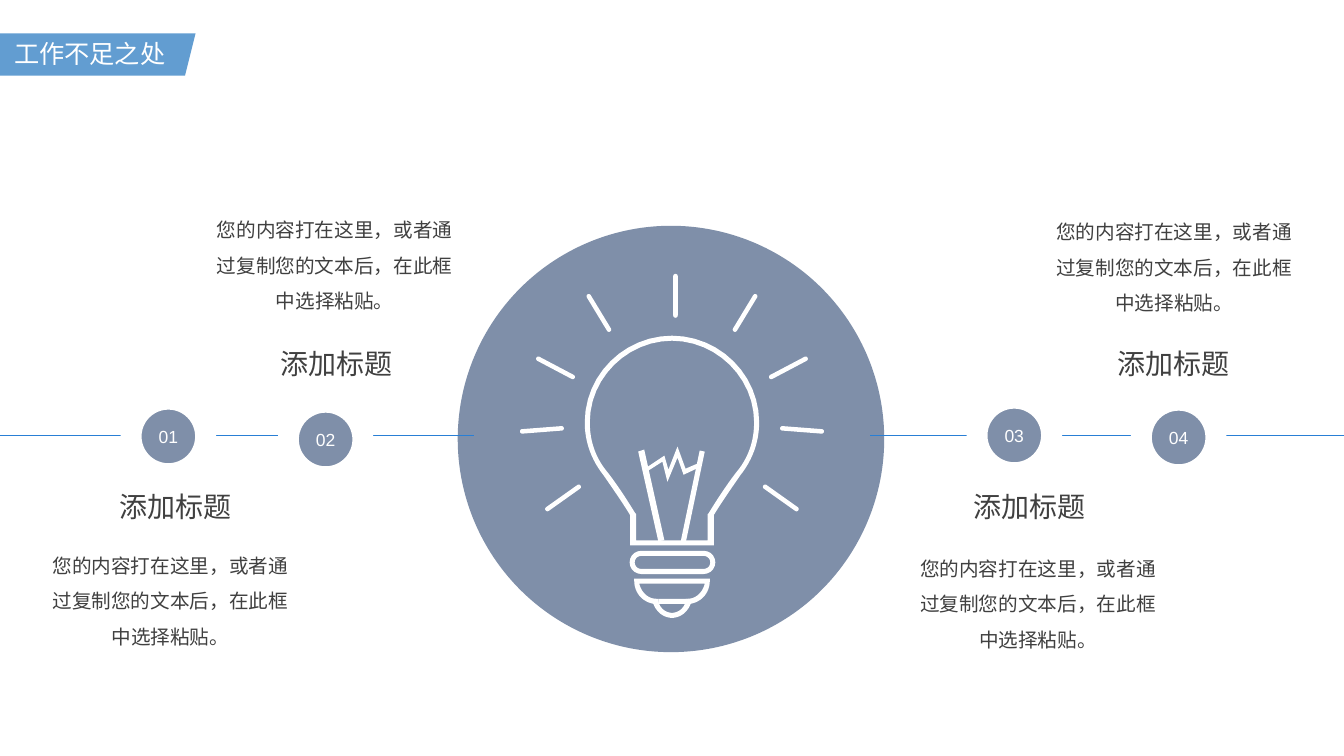
import math
from dataclasses import dataclass

import pptx
import pptx.dml.color
import pptx.enum.shapes
import pptx.enum.text
import pptx.oxml
import pptx.oxml.ns
import pptx.util

PX = 9144  # EMU per px, 100 px to the inch
FONT = "Arial"
COLORS = {"slate": "7F8FA9", "banner": "629DD1", "line": "297FD5",
          "text": "404040", "white": "FFFFFF"}
HEADING = "添加标题"
BODY = "您的内容打在这里，或者通过复制您的文本后，在此框中选择粘贴。"
MIRROR = 1333  # x and MIRROR - x lie on opposite sides of the bulb

SHAPE = pptx.enum.shapes.MSO_SHAPE
ALIGN = pptx.enum.text.PP_ALIGN
ANCHOR = pptx.enum.text.MSO_ANCHOR
AUTOSIZE = pptx.enum.text.MSO_AUTO_SIZE

Point = tuple[float, float]
Box = tuple[int, int, int, int]


@dataclass
class Topic:
    number: str
    dot: Point
    heading: Point
    body: Box


TOPICS = [
    Topic("01", (130, 396), (78, 481), (42, 533, 254, 116)),
    Topic("02", (286, 399), (237, 339), (203, 200, 258, 116)),
    Topic("03", (969, 395), (925, 481), (894, 536, 271, 116)),
    Topic("04", (1132, 397), (1067, 339), (1034, 202, 261, 116)),
]

# Left halves of the bulb outlines: pairs are corners, sixes are Bezier curves
GLASS = [
    [(667, 333), (619, 333, 580, 372, 580, 419), (580, 439, 587, 457, 599, 472),
     (608, 485, 617, 498, 625, 511), (625, 541)],
    [(667, 338), (622, 338, 585, 375, 585, 419), (585, 438, 591, 455, 603, 469),
     (613, 482, 622, 496, 630, 509), (631, 510), (631, 536)],
]
CAP = [
    [(667, 613), (658, 613, 651, 607, 648, 599), (637, 597, 629, 588, 629, 576),
     (629, 574)],
    [(667, 608), (660, 608, 654, 603, 653, 596), (653, 594), (651, 594),
     (642, 594, 636, 587, 634, 579)],
]
FILAMENT = [
    [(653, 537), (633, 448), (639, 446), (659, 536)],
    [(680, 539), (675, 538), (694, 447), (699, 448)],
    [(662, 478), (657, 458), (643, 467), (641, 464), (659, 452), (663, 466),
     (672, 443), (680, 465), (694, 459), (695, 463), (678, 471), (672, 454)],
]
RIGHT_RAYS = [((729, 327), (749, 294)), ((765, 374), (799, 356)),
              ((776, 425), (815, 428)), ((759, 483), (790, 505))]
TOP_RAY = ((670, 274), (670, 313))


def rgb(name: str) -> pptx.dml.color.RGBColor:
    return pptx.dml.color.RGBColor.from_string(COLORS[name])


def paint(sp, color: str) -> None:
    sp.fill.solid()
    sp.fill.fore_color.rgb = rgb(color)
    sp.line.fill.background()
    sp.shadow.inherit = False


def add_preset(shapes, kind, box: Box, color: str):
    sp = shapes.add_shape(kind, *(v * PX for v in box))
    paint(sp, color)
    return sp


def write(tf, text: str, size: float, color: str, align) -> None:
    p = tf.paragraphs[0]
    p.alignment = align
    r = p.add_run()
    r.text = text
    r.font.name = FONT
    r.font.size = pptx.util.Pt(size)
    r.font.color.rgb = rgb(color)


def add_text(s, box: Box, text: str, size: float, align, spacing=None) -> None:
    tf = s.shapes.add_textbox(*(v * PX for v in box)).text_frame
    tf.word_wrap = True
    tf.auto_size = AUTOSIZE.SHAPE_TO_FIT_TEXT
    write(tf, text, size, "text", align)
    if spacing:
        tf.paragraphs[0].line_spacing = spacing


def add_line(s, x1: int, x2: int, y: int) -> None:
    cxn = s.shapes.add_connector(pptx.enum.shapes.MSO_CONNECTOR.STRAIGHT,
                                 x1 * PX, y * PX, x2 * PX, y * PX)
    cxn.line.color.rgb = rgb("line")
    cxn.line.width = pptx.util.Pt(0.5)
    pptx.oxml.ns.qn("a:effectLst")
    cxn._element.spPr.append(pptx.oxml.parse_xml(
        f'<a:effectLst {pptx.oxml.ns.nsdecls("a")}/>'))


def flatten(half: list[tuple], steps: int = 12) -> list[Point]:
    points = [half[0]]
    for seg in half[1:]:
        if len(seg) == 2:
            points.append(seg)
            continue
        a, b, c, d = points[-1], seg[:2], seg[2:4], seg[4:]
        for i in range(1, steps + 1):
            t = i / steps
            u = 1 - t
            points.append(tuple(
                u**3 * a[k] + 3 * u * u * t * b[k] + 3 * u * t * t * c[k] + t**3 * d[k]
                for k in (0, 1)))
    return points


def symmetric(half: list[tuple]) -> list[Point]:
    left = flatten(half)
    return left + [(MIRROR - x, y) for x, y in reversed(left)]


def capsule(start: Point, end: Point, width: float, steps: int = 10) -> list[Point]:
    angle = math.atan2(end[1] - start[1], end[0] - start[0])
    points = []
    for (x, y), first in ((end, angle - math.pi / 2), (start, angle + math.pi / 2)):
        for i in range(steps + 1):
            a = first + math.pi * i / steps
            points.append((x + width / 2 * math.cos(a), y + width / 2 * math.sin(a)))
    return points


def add_outline(shapes, contours: list[list[Point]]) -> None:
    fb = None
    for contour in contours:
        emu = [(x * PX, y * PX) for x, y in contour]
        if fb is None:
            fb = shapes.build_freeform(*emu[0])
        else:
            fb.move_to(*emu[0])
        fb.add_line_segments(emu[1:], close=True)
    paint(fb.convert_to_shape(), "white")


def add_bulb(s) -> None:
    bulb = s.shapes.add_group_shape().shapes
    add_outline(bulb, [capsule((636, 558), (698, 558), w) for w in (23, 13)])
    for halves in (CAP, GLASS):
        add_outline(bulb, [symmetric(half) for half in halves])
    for wire in FILAMENT:
        add_outline(bulb, [wire])
    add_preset(bulb, SHAPE.RECTANGLE, (653, 594, 29, 5), "white")
    left_rays = [tuple((MIRROR - x, y) for x, y in ray) for ray in RIGHT_RAYS]
    for start, end in [TOP_RAY, *RIGHT_RAYS, *left_rays]:
        add_outline(bulb, [capsule(start, end, 4.5)])


def add_topic(s, topic: Topic) -> None:
    dot = add_preset(s.shapes, SHAPE.OVAL, (*topic.dot, 74, 74), "slate")
    dot.line.color.rgb = rgb("white")
    dot.line.width = pptx.util.Pt(15)
    dot.text_frame.vertical_anchor = ANCHOR.MIDDLE
    write(dot.text_frame, topic.number, 12.5, "white", ALIGN.CENTER)
    add_text(s, (*topic.heading, 162, 44), HEADING, 20, ALIGN.RIGHT)
    add_text(s, topic.body, BODY, 14, ALIGN.CENTER, 1.5)


def add_title(s) -> None:
    add_preset(s.shapes, SHAPE.PARALLELOGRAM, (-53, 33, 247, 42), "banner")
    sp = s.shapes.title
    sp.left, sp.top, sp.width, sp.height = (v * PX for v in (4, 33, 181, 41))
    tf = sp.text_frame
    tf.word_wrap = True
    tf.auto_size = AUTOSIZE.NONE
    tf.vertical_anchor = ANCHOR.TOP
    write(tf, "工作不足之处", 18, "white", ALIGN.LEFT)
    sp._element.getparent().append(sp._element)  # in front of the banner


def main() -> None:
    prs = pptx.Presentation()
    prs.slide_width, prs.slide_height = 1333 * PX, 750 * PX
    s = prs.slides.add_slide(prs.slide_layouts[5])

    # Light bulb on its disc
    add_preset(s.shapes, SHAPE.OVAL, (454, 224, 423, 423), "slate")
    add_bulb(s)

    # Timeline and its topics
    add_line(s, 470, 0, 432)
    add_line(s, 1333, 863, 432)
    for topic in TOPICS:
        add_topic(s, topic)

    # Title banner
    add_title(s)
    prs.save("out.pptx")


if __name__ == "__main__":
    main()
